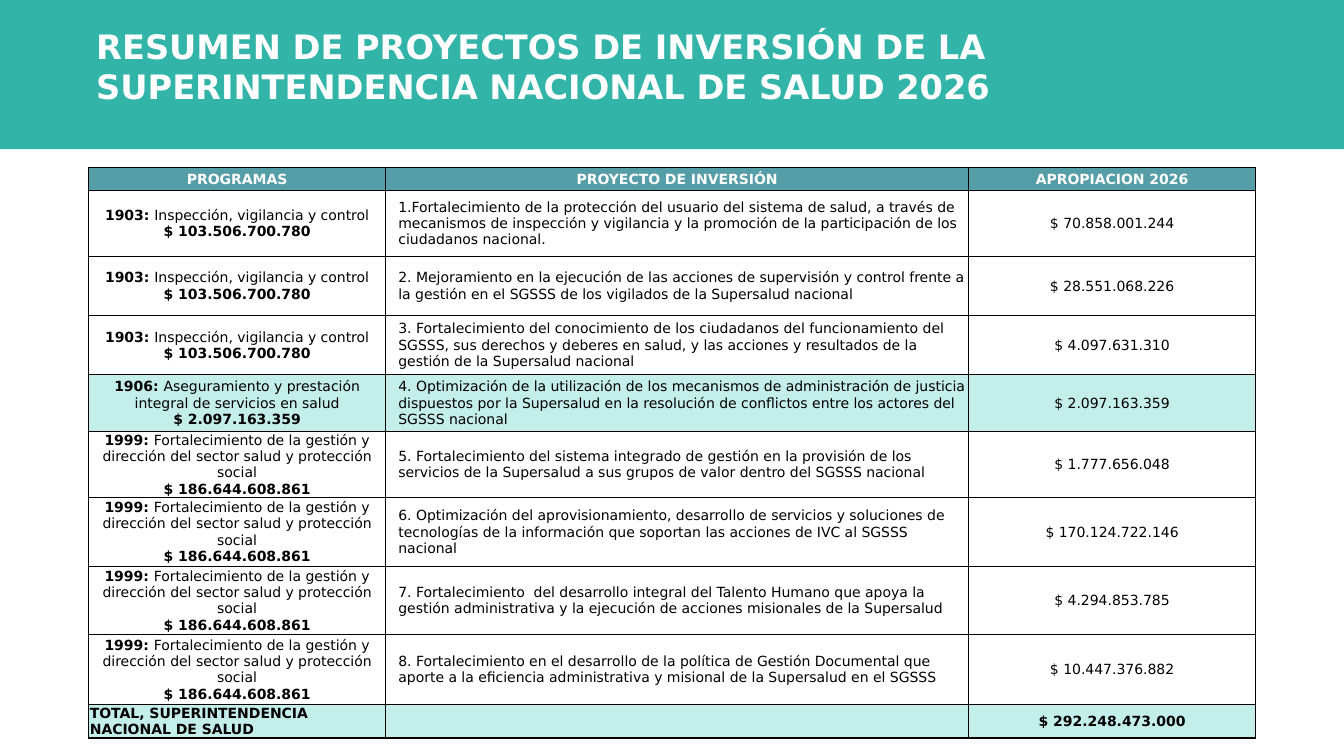
from lxml import etree
from pptx import Presentation
from pptx.dml.color import RGBColor
from pptx.enum import shapes, text
from pptx.oxml import ns
from pptx.util import Pt

FONT = "DejaVu Sans"
WHITE, BLACK, TEAL, HEAD, PALE = "FFFFFF", "000000", "32B4A8", "559DA7", "C4EEEA"
LEFT, MID = text.PP_ALIGN.LEFT, text.PP_ALIGN.CENTER
TITLE = "RESUMEN DE PROYECTOS DE INVERSIÓN DE LA SUPERINTENDENCIA NACIONAL DE SALUD 2026"
HEADS = ["PROGRAMAS", "PROYECTO DE INVERSIÓN", "APROPIACION 2026"]
TOTAL = ["TOTAL, SUPERINTENDENCIA NACIONAL DE SALUD", "", "$ 292.248.473.000"]
PLANS = {
    "1903": ("Inspección, vigilancia y control", "$ 103.506.700.780", WHITE),
    "1906": ("Aseguramiento y prestación integral de servicios en salud",
             "$ 2.097.163.359", PALE),
    "1999": ("Fortalecimiento de la gestión y dirección del sector salud y protección social",
             "$ 186.644.608.861", WHITE),
}
WORKS = [
    ("1903", "1.Fortalecimiento de la protección del usuario del sistema de salud, a través de "
     "mecanismos de inspección y vigilancia y la promoción de la participación de los "
     "ciudadanos nacional.", "$ 70.858.001.244"),
    ("1903", "2. Mejoramiento en la ejecución de las acciones de supervisión y control frente a "
     "la gestión en el SGSSS de los vigilados de la Supersalud nacional", "$ 28.551.068.226"),
    ("1903", "3. Fortalecimiento del conocimiento de los ciudadanos del funcionamiento del "
     "SGSSS, sus derechos y deberes en salud, y las acciones y resultados de la "
     "gestión de la Supersalud nacional", "$ 4.097.631.310"),
    ("1906", "4. Optimización de la utilización de los mecanismos de administración de justicia "
     "dispuestos por la Supersalud en la resolución de conflictos entre los actores del "
     "SGSSS nacional", "$ 2.097.163.359"),
    ("1999", "5. Fortalecimiento del sistema integrado de gestión en la provisión de los "
     "servicios de la Supersalud a sus grupos de valor dentro del SGSSS nacional",
     "$ 1.777.656.048"),
    ("1999", "6. Optimización del aprovisionamiento, desarrollo de servicios y soluciones de "
     "tecnologías de la información que soportan las acciones de IVC al SGSSS nacional",
     "$ 170.124.722.146"),
    ("1999", "7. Fortalecimiento  del desarrollo integral del Talento Humano que apoya la "
     "gestión administrativa y la ejecución de acciones misionales de la Supersalud",
     "$ 4.294.853.785"),
    ("1999", "8. Fortalecimiento en el desarrollo de la política de Gestión Documental que "
     "aporte a la eficiencia administrativa y misional de la Supersalud en el SGSSS",
     "$ 10.447.376.882"),
]
COLS = [211.7, 416.9, 204.5]
ROWS = [16.5, 47, 42.3, 42.3, 40.5, 47, 49, 49, 49.8, 16.5]


def paint(form, tone):
    """Set a fill or font to a hex colour."""
    if hasattr(form, "solid"):
        form.solid()
        form.fore_color.rgb = RGBColor.from_string(tone)
    else:
        form.color.rgb = RGBColor.from_string(tone)


def write(para, words, size, tone, bold, align=LEFT):
    """Add one run to a paragraph."""
    para.alignment = align
    run = para.add_run()
    run.text = words
    run.font.name, run.font.size, run.font.bold = FONT, Pt(size), bold
    paint(run.font, tone)


def edge(cell):
    """Draw thin black borders round a cell."""
    props = cell._tc.get_or_add_tcPr()
    for side in ("lnL", "lnR", "lnT", "lnB"):
        line = etree.SubElement(props, ns.qn("a:" + side), w=str(Pt(1)))
        fill = etree.SubElement(line, ns.qn("a:solidFill"))
        etree.SubElement(fill, ns.qn("a:srgbClr"), val=BLACK)


def fit(cell, paras, back, tone=BLACK, align=MID, inset=0.7):
    """Fill a cell with paragraphs of (words, bold) runs."""
    edge(cell)
    paint(cell.fill, back)
    cell.vertical_anchor = text.MSO_ANCHOR.MIDDLE
    cell.margin_left = Pt(inset)
    cell.margin_right = cell.margin_top = Pt(0.7)
    cell.margin_bottom = Pt(0)
    for i, runs in enumerate(paras):
        frame = cell.text_frame
        para = frame.add_paragraph() if i else frame.paragraphs[0]
        for words, bold in runs:
            write(para, words, 10, tone, bold, align)


def banner(slide, x, y, w, h):
    """Place the coloured band and the title over it."""
    band = slide.shapes.add_shape(shapes.MSO_SHAPE.RECTANGLE, Pt(x), Pt(y), Pt(w), Pt(h))
    band.shadow.inherit = False
    paint(band.fill, TEAL)
    band.line.fill.background()
    title = slide.shapes.title
    band._element.addnext(title._element)
    title.left, title.top = Pt(x + 61.5), Pt(y + 11)
    title.width, title.height = Pt(706), Pt(77)
    frame = title.text_frame
    frame.word_wrap, frame.auto_size = True, text.MSO_AUTO_SIZE.NONE
    frame.vertical_anchor = text.MSO_ANCHOR.TOP
    frame.margin_left = frame.margin_right = Pt(7.2)
    frame.margin_top = frame.margin_bottom = Pt(7.2)
    write(frame.paragraphs[0], TITLE, 24, WHITE, True)


def budget(slide, x, y, w, h):
    """Place the table of programmes, projects and amounts."""
    table = slide.shapes.add_table(len(ROWS), len(COLS), Pt(x), Pt(y), Pt(w), Pt(h)).table
    for col, size in zip(table.columns, COLS):
        col.width = Pt(size)
    for row, size in zip(table.rows, ROWS):
        row.height = Pt(size)
    for i, words in enumerate(HEADS):
        fit(table.cell(0, i), [[(words, True)]], HEAD, WHITE)
    for r, (code, work, sum_) in enumerate(WORKS, 1):
        name, cost, back = PLANS[code]
        plan = [[(code + ": ", True), (name, False)], [(cost, True)]]
        fit(table.cell(r, 0), plan, back)
        fit(table.cell(r, 1), [[(work, False)]], back, align=LEFT, inset=9.4)
        fit(table.cell(r, 2), [[(sum_, False)]], back)
    for i, words in enumerate(TOTAL):
        paras = [[(words, True)]] if words else []
        fit(table.cell(len(ROWS) - 1, i), paras, PALE, align=MID if i else LEFT)


def main():
    """Build and save the slide."""
    deck = Presentation()
    deck.slide_width, deck.slide_height = Pt(960), Pt(540)
    slide = deck.slides.add_slide(deck.slide_layouts[5])
    banner(slide, 0, 0, 960, 106.6)
    budget(slide, 63.5, 119.5, sum(COLS), sum(ROWS))
    deck.save("out.pptx")


if __name__ == "__main__":
    main()
